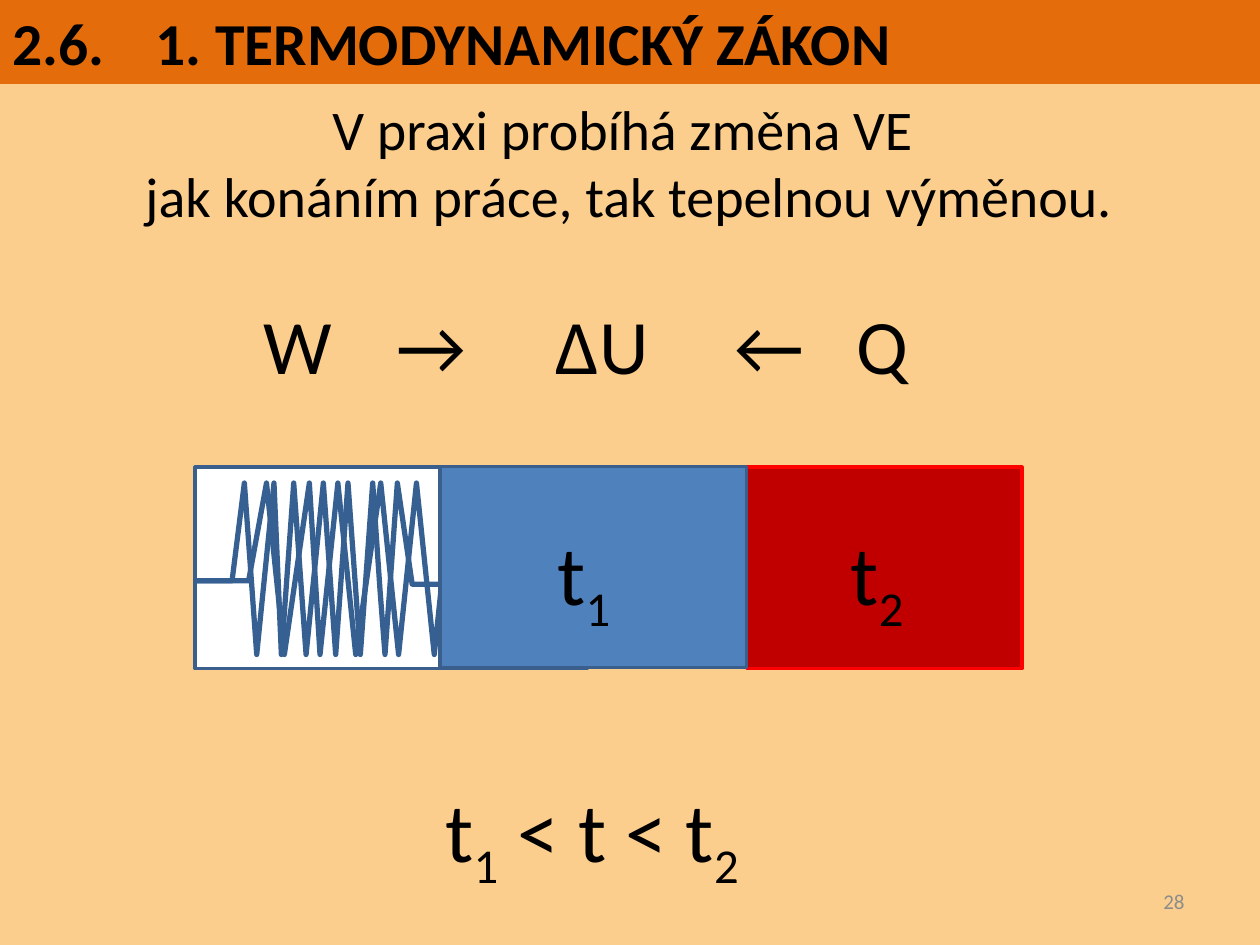
from lxml import etree
from pptx import Presentation
from pptx.dml.color import RGBColor
from pptx.enum.shapes import MSO_SHAPE
from pptx.enum.text import MSO_ANCHOR, PP_ALIGN
from pptx.oxml.ns import qn
from pptx.util import Pt

RECT = MSO_SHAPE.RECTANGLE
MIDDLE = MSO_ANCHOR.MIDDLE
LEFT, CENTER, RIGHT = PP_ALIGN.LEFT, PP_ALIGN.CENTER, PP_ALIGN.RIGHT

SAND = RGBColor(0xFB, 0xCE, 0x8D)
ORANGE = RGBColor(0xE4, 0x6C, 0x0A)
BLACK = RGBColor(0, 0, 0)
WHITE = RGBColor(0xFF, 0xFF, 0xFF)
GRAY = RGBColor(0x8C, 0x8C, 0x8C)
BLUE = RGBColor(0x4F, 0x81, 0xBD)
EDGE = RGBColor(0x3A, 0x5F, 0x8C)
COIL = RGBColor(0x37, 0x60, 0x92)
DARK = RGBColor(0xC0, 0, 0)
RED = RGBColor(0xFF, 0, 0)

# Spring corners as (share of width, share of height)
ZIGZAG = [(0, .57), (.15, .57), (.2, 0), (.25, 1), (.32, 0), (.35, 1),
          (.4, 0), (.45, 1), (.52, 0), (.57, 1), (.62, 0), (.67, 1),
          (.72, 0), (.75, .63), (.77, 1), (.82, 0), (.88, .59), (1, .59)]


def style(para, size, color=BLACK, align=LEFT, bold=False):
    para.alignment = align
    font = para.font
    font.name, font.size, font.bold = "Calibri", Pt(size), bold
    font.color.rgb = color


def set_tabs(para, stops):
    """Add left tab stops, in points from the text edge."""
    tabs = etree.Element(qn("a:tabLst"))
    for stop in stops:
        etree.SubElement(tabs, qn("a:tab"), pos=str(Pt(stop)), algn="l")
    props = para._p.get_or_add_pPr()
    props.insert_element_before(tabs, "a:defRPr", "a:extLst")


def add_text(slide, box):
    frame = slide.shapes.add_textbox(*map(Pt, box)).text_frame
    frame.word_wrap = True
    return frame


def add_block(slide, box, fill, line=None):
    block = slide.shapes.add_shape(RECT, *map(Pt, box))
    block.shadow.inherit = False
    block.fill.solid()
    block.fill.fore_color.rgb = fill
    if line is None:
        block.line.fill.background()
    else:
        block.line.color.rgb = line
        block.line.width = Pt(2)
    return block


def add_title(slide, box):
    frame = add_block(slide, box, ORANGE).text_frame
    frame.vertical_anchor = MIDDLE
    para = frame.paragraphs[0]
    para.text = "2.6.\t1. TERMODYNAMICKÝ ZÁKON"
    style(para, 34, bold=True)
    set_tabs(para, [82])


def add_body(slide, box):
    frame = add_text(slide, box)
    intro = frame.paragraphs[0]
    intro.text = "V praxi probíhá změna VE \vjak konáním práce, tak tepelnou výměnou."
    style(intro, 32, align=CENTER)
    flow = frame.add_paragraph()
    flow.text = "\tW\t→\tΔU\t←\tQ"
    style(flow, 44)
    flow.space_before = Pt(39)
    set_tabs(flow, [144, 220, 311, 413, 483])


def add_formula(slide, box, parts):
    """Write parts in turn; a digit becomes a subscript."""
    para = add_text(slide, box).paragraphs[0]
    style(para, 48)
    for part in parts:
        run = para.add_run()
        run.text = part
        if part.isdigit():
            run.font._element.set("baseline", "-25000")


def add_spring(slide, box):
    left, top, width, height = box
    points = [(Pt(left + x * width), Pt(top + y * height)) for x, y in ZIGZAG]
    form = slide.shapes.build_freeform(*points[0])
    form.add_line_segments(points[1:], close=False)
    spring = form.convert_to_shape()
    spring.shadow.inherit = False
    spring.fill.background()
    spring.line.color.rgb = COIL
    spring.line.width = Pt(3)


def add_piston(slide, box):
    left, top, width, height = box
    add_block(slide, (left, top, 224, height), WHITE, EDGE)
    for reach in (204, 141):
        add_spring(slide, (left, top + 9, reach, 98))
    add_block(slide, (left + 315, top, width - 315, height), DARK, RED)
    add_block(slide, (left + 140, top - 0.5, 175, height), BLUE, EDGE)
    for shift, digit in ((200, "1"), (367.5, "2")):
        add_formula(slide, (left + shift, top + 27.5, 59, 65.5), ["t", digit])


def add_number(slide, box):
    frame = add_text(slide, box)
    frame.vertical_anchor = MIDDLE
    para = frame.paragraphs[0]
    para.text = "28"
    style(para, 12, GRAY, RIGHT)


def main():
    deck = Presentation()
    deck.slide_width, deck.slide_height = Pt(720), Pt(540)
    slide = deck.slides.add_slide(deck.slide_layouts[6])
    back = slide.background.fill
    back.solid()
    back.fore_color.rgb = SAND

    add_body(slide, (-0.5, 50.5, 720, 399.5))
    add_title(slide, (0, 0, 720, 48))
    add_piston(slide, (111.5, 267, 472.5, 115))
    add_formula(slide, (247.5, 441.5, 189, 65.5), ["t", "1", " < t < t", "2"])
    add_number(slide, (516, 500.5, 168, 29))
    deck.save("out.pptx")


if __name__ == "__main__":
    main()
